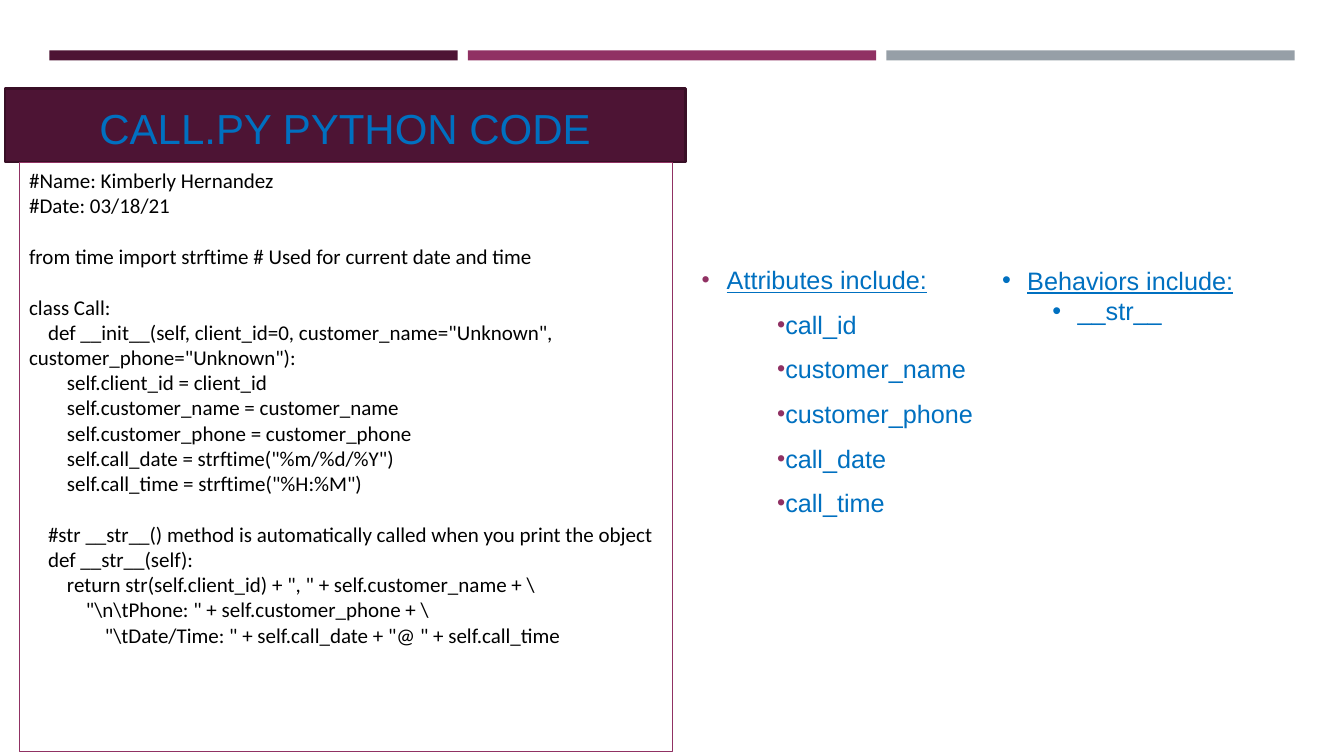
from lxml.etree import SubElement
from pptx import Presentation
from pptx.dml.color import RGBColor
from pptx.enum.shapes import MSO_SHAPE
from pptx.enum.text import MSO_ANCHOR, MSO_AUTO_SIZE, PP_ALIGN
from pptx.oxml.ns import qn
from pptx.util import Inches, Pt

COLUMNS, ROWS = 133.3, 75
CELL = Inches(0.1)
COLORS = {"plum": "4D1434", "edge": "390F26", "berry": "903163",
          "grey": "969FA7", "blue": "0070C0", "black": "000000"}
HEADING = {"name": "Arial", "size": Pt(30), "bold": False}
LIST_TEXT = {"name": "Arial", "size": Pt(18)}
CODE_TEXT = {"name": "Calibri", "size": Pt(15)}
ATTRIBUTES = ["call_id", "customer_name", "customer_phone", "call_date", "call_time"]
CODE = r'''#Name: Kimberly Hernandez
#Date: 03/18/21

from time import strftime # Used for current date and time

class Call:
    def __init__(self, client_id=0, customer_name="Unknown", customer_phone="Unknown"):
        self.client_id = client_id
        self.customer_name = customer_name
        self.customer_phone = customer_phone
        self.call_date = strftime("%m/%d/%Y")
        self.call_time = strftime("%H:%M")

    #str __str__() method is automatically called when you print the object
    def __str__(self):
        return str(self.client_id) + ", " + self.customer_name + \
            "\n\tPhone: " + self.customer_phone + \
                "\tDate/Time: " + self.call_date + "@ " + self.call_time'''


def rgb(name):
    """Return the named palette colour."""
    return RGBColor.from_string(COLORS[name])


def span(box):
    """Turn a box in grid cells into slide lengths."""
    return [round(cells * CELL) for cells in box]


def apply_format(target, values):
    """Set each attribute of the target from a dict."""
    for name, value in values.items():
        setattr(target, name, value)


def style_text(paragraph, values, color):
    """Give a paragraph its font and colour."""
    apply_format(paragraph.font, values)
    paragraph.font.color.rgb = rgb(color)


def add_rectangle(slide, box, fill=None, line=None, width=1):
    """Add a flat rectangle with an optional fill and outline."""
    shape = slide.shapes.add_shape(MSO_SHAPE.RECTANGLE, *span(box))
    shape.shadow.inherit = False
    if fill:
        shape.fill.solid()
        shape.fill.fore_color.rgb = rgb(fill)
    else:
        shape.fill.background()
    if line:
        shape.line.color.rgb = rgb(line)
        shape.line.width = Pt(width)
    else:
        shape.line.fill.background()
    return shape


def add_stripes(slide, box):
    """Add three equal coloured stripes across the box."""
    left, top, width, height = box
    gap = 1
    stripe = (width - 2 * gap) / 3
    for index, color in enumerate(["plum", "berry", "grey"]):
        add_rectangle(slide, (left + index * (stripe + gap), top, stripe, height), color)


def add_heading(slide, box):
    """Add the dark banner and set the title over it."""
    left, top, width, height = box
    add_rectangle(slide, box, "plum", "edge", 1.75)
    title = slide.shapes.title
    slide.shapes.element.append(title.element)
    title.left, title.top, title.width, title.height = span(
        (left + 4.1, top - 0.6, width - 8.2, height + 1.6))
    title.text = "CALL.PY PYTHON CODE"
    apply_format(title.text_frame, {"vertical_anchor": MSO_ANCHOR.MIDDLE, "word_wrap": True,
                                    "auto_size": MSO_AUTO_SIZE.NONE})
    paragraph = title.text_frame.paragraphs[0]
    paragraph.alignment = PP_ALIGN.CENTER
    style_text(paragraph, HEADING, "blue")


def add_code(slide, box):
    """Add the outlined listing, with a line's gap between its blocks."""
    frame = add_rectangle(slide, box, line="berry", width=0.25).text_frame
    apply_format(frame, {"vertical_anchor": MSO_ANCHOR.TOP, "word_wrap": True})
    for block_index, block in enumerate(CODE.split("\n\n")):
        for line_index, line in enumerate(block.split("\n")):
            first = block_index == line_index == 0
            paragraph = frame.paragraphs[0] if first else frame.add_paragraph()
            paragraph.text = line
            paragraph.alignment = PP_ALIGN.LEFT
            if block_index and not line_index:
                paragraph.space_before = Pt(18.3)
            style_text(paragraph, CODE_TEXT, "black")


def add_bullet(paragraph, margin, hanging, color, percent):
    """Give a paragraph a round bullet and its indents in inches."""
    properties = paragraph._p.get_or_add_pPr()
    properties.set("marL", str(Inches(margin)))
    properties.set("indent", str(-Inches(hanging)))
    bullet_color = SubElement(properties, qn("a:buClr"))
    SubElement(bullet_color, qn("a:srgbClr"), val=COLORS[color])
    SubElement(properties, qn("a:buSzPct"), val=str(percent * 1000))
    SubElement(properties, qn("a:buFont"), typeface="Arial")
    SubElement(properties, qn("a:buChar"), char="•")


def add_list(slide, box, heading, items, anchor, bullet, hanging, before=0, after=0):
    """Add an underlined heading with indented items below it."""
    frame = slide.shapes.add_textbox(*span(box)).text_frame
    apply_format(frame, {"word_wrap": True, "vertical_anchor": anchor})
    for index, text in enumerate([heading, *items]):
        paragraph = frame.add_paragraph() if index else frame.paragraphs[0]
        paragraph.text = text
        paragraph.level = min(index, 1)
        if index:
            paragraph.space_before = Pt(before)
        paragraph.space_after = Pt(after)
        add_bullet(paragraph, *((0.81, hanging) if index else (0.31, 0.25)), *bullet)
        style_text(paragraph, {**LIST_TEXT, "underline": index == 0}, "blue")


def build_code_slide(presentation):
    """Build the slide with the listing and the two lists."""
    slide = presentation.slides.add_slide(presentation.slide_layouts[5])
    add_stripes(slide, (4.9, 5, 123.5, 1))
    add_heading(slide, (0.5, 8.8, 67.5, 7.3))
    add_list(slide, (68, 16.1, 42, 45.4), "Attributes include:", ATTRIBUTES,
             MSO_ANCHOR.MIDDLE, ("berry", 92), 0, 4.3, 6)
    add_code(slide, (1.9, 16.1, 64.8, 58.4))
    add_list(slide, (97.8, 25.8, 27.2, 7.1), "Behaviors include:", ["__str__"],
             MSO_ANCHOR.TOP, ("blue", 100), 0.25)


def main():
    """Create and save the presentation."""
    presentation = Presentation()
    presentation.slide_width, presentation.slide_height = span((COLUMNS, ROWS))
    build_code_slide(presentation)
    presentation.save("out.pptx")


if __name__ == "__main__":
    main()
